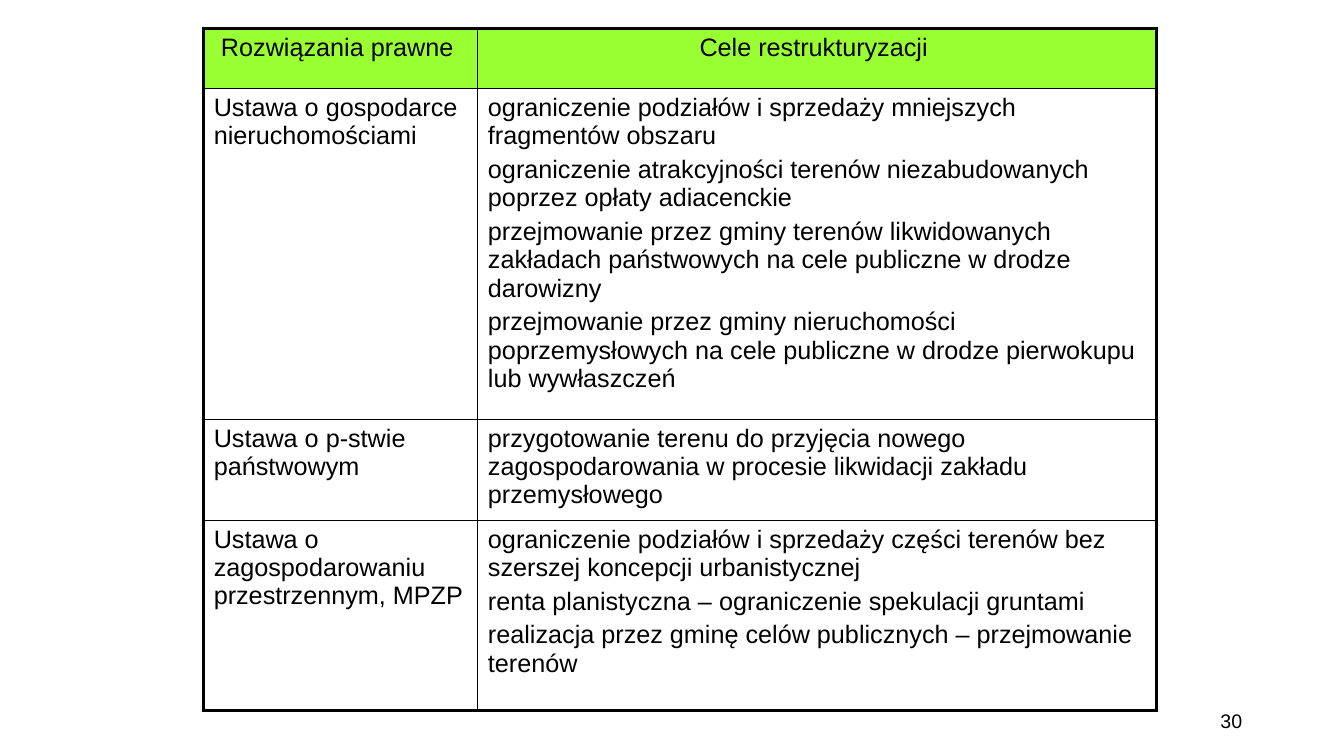
import pptx
import pptx.dml.color
import pptx.enum.text
import pptx.oxml
import pptx.oxml.ns
import pptx.util

COLORS = {"text": "000000", "line": "000000", "header": "99FF33"}
ALIGN = pptx.enum.text.PP_ALIGN
GRID = 0.1  # inches per grid column or row
THIN, THICK = 1, 2.25
COLUMNS = [27.2, 67.3]
ROWS = [6, 32.8, 10, 18.9]
LAWS = [
    (["Rozwiązania prawne "], ["Cele restrukturyzacji "]),
    (["Ustawa o gospodarce nieruchomościami"], [
        "ograniczenie podziałów i sprzedaży mniejszych fragmentów obszaru",
        "ograniczenie atrakcyjności terenów niezabudowanych poprzez opłaty adiacenckie",
        "przejmowanie przez gminy terenów likwidowanych zakładach państwowych "
        "na cele publiczne w drodze darowizny",
        "przejmowanie przez gminy nieruchomości poprzemysłowych na cele publiczne "
        "w drodze pierwokupu lub wywłaszczeń"]),
    (["Ustawa o p-stwie państwowym"], [
        "przygotowanie terenu do przyjęcia nowego zagospodarowania w procesie "
        "likwidacji zakładu przemysłowego"]),
    (["Ustawa o zagospodarowaniu przestrzennym, MPZP"], [
        "ograniczenie podziałów i sprzedaży części terenów bez szerszej koncepcji "
        "urbanistycznej",
        "renta planistyczna – ograniczenie spekulacji gruntami",
        "realizacja przez gminę celów publicznych – przejmowanie terenów"]),
]


def grid(n):
    return pptx.util.Inches(n * GRID)


def rgb(name):
    return pptx.dml.color.RGBColor.from_string(COLORS[name])


def write(tf, paragraphs, size, align):
    tf.word_wrap = True
    for i, text in enumerate(paragraphs):
        p = tf.add_paragraph() if i else tf.paragraphs[0]
        p.alignment = align
        if i:
            p.space_before = pptx.util.Pt(4)
        r = p.add_run()
        r.text = text
        for name, value in {"name": "Arial", "size": pptx.util.Pt(size), "bold": False}.items():
            setattr(r.font, name, value)
        r.font.color.rgb = rgb("text")


def set_borders(cell, widths):
    """Draw the cell's borders; widths maps L, R, T, B, in that order, to points."""
    tcPr = cell._tc.get_or_add_tcPr()
    for side, width in widths.items():
        tcPr.append(pptx.oxml.parse_xml(
            f'<a:ln{side} {pptx.oxml.ns.nsdecls("a")} w="{pptx.util.Pt(width)}">'
            f'<a:solidFill><a:srgbClr val="{COLORS["line"]}"/></a:solidFill></a:ln{side}>'))


def add_law_table(s, left, top):
    table = s.shapes.add_table(len(ROWS), len(COLUMNS), grid(left), grid(top),
                               grid(sum(COLUMNS)), grid(sum(ROWS))).table
    table.first_row = table.horz_banding = False
    for column, width in zip(table.columns, COLUMNS):
        column.width = grid(width)
    last_row, last_col = len(ROWS) - 1, len(COLUMNS) - 1
    for i, (row, height) in enumerate(zip(table.rows, ROWS)):
        row.height = grid(height)
        for j, cell in enumerate(row.cells):
            outer = {"L": j == 0, "R": j == last_col, "T": i == 0, "B": i == last_row}
            set_borders(cell, {side: THICK if edge else THIN for side, edge in outer.items()})
            if i == 0:
                cell.fill.solid()
                cell.fill.fore_color.rgb = rgb("header")
            else:
                cell.fill.background()
            write(cell.text_frame, LAWS[i][j], 18, ALIGN.LEFT if i else ALIGN.CENTER)


def add_page_number(s, number, left, top, width, height):
    tf = s.shapes.add_textbox(*map(grid, (left, top, width, height))).text_frame
    tf.vertical_anchor = pptx.enum.text.MSO_ANCHOR.MIDDLE
    write(tf, [number], 14, ALIGN.RIGHT)


def main():
    prs = pptx.Presentation()
    prs.slide_width, prs.slide_height = pptx.util.Inches(13.33), pptx.util.Inches(7.5)
    s = prs.slides.add_slide(prs.slide_layouts[6])
    add_law_table(s, 20.2, 2.8)
    add_page_number(s, "30", 94.2, 69.5, 30, 4)
    prs.save("out.pptx")


if __name__ == "__main__":
    main()
